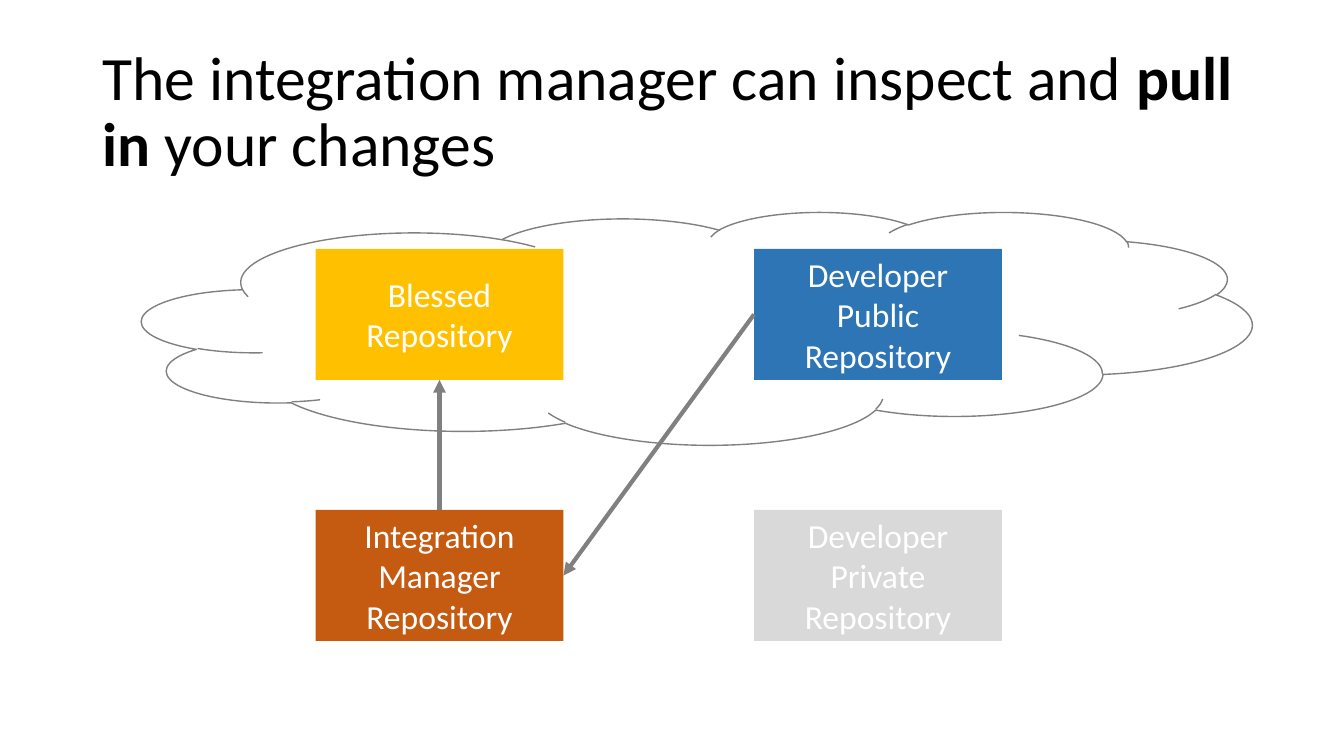
from lxml.etree import SubElement
from pptx import Presentation
from pptx.dml.color import RGBColor
from pptx.enum.shapes import MSO_CONNECTOR, MSO_SHAPE
from pptx.enum.text import MSO_ANCHOR, PP_ALIGN
from pptx.oxml.ns import qn
from pptx.util import Pt

COLORS = {
    "text": "000000",
    "label": "FFFFFF",
    "line": "808080",
    "blessed": "FFC000",
    "public": "2E75B6",
    "manager": "C55A11",
    "private": "D9D9D9",
}
TOP, LEFT, BOTTOM, RIGHT = range(4)
COLUMNS = (225.4, 538.6)
ROWS = (177.8, 364.3)
BOX_SIZE = (177.1, 93.6)
REPOSITORIES = {
    "blessed": ("Blessed Repository", 0, 0),
    "public": ("Developer Public Repository", 1, 0),
    "manager": ("Integration Manager Repository", 0, 1),
    "private": ("Developer Private Repository", 1, 1),
}


def color(name):
    return RGBColor.from_string(COLORS[name])


class Slide:
    font = "Calibri"
    title_size = 44
    label_size = 24

    def __init__(self, deck):
        self.page = deck.slides.add_slide(deck.slide_layouts[6])

    def add_text(self, box, spans, size, ink, alignment, spacing):
        frame = box.text_frame
        for name, value in {"word_wrap": True, "vertical_anchor": MSO_ANCHOR.MIDDLE}.items():
            setattr(frame, name, value)
        para = frame.paragraphs[0]
        for name, value in {"alignment": alignment, "line_spacing": spacing}.items():
            setattr(para, name, value)
        for text, bold in spans:
            span = para.add_run()
            span.text = text
            style = {"name": self.font, "size": Pt(size), "bold": bold}
            for name, value in style.items():
                setattr(span.font, name, value)
            span.font.color.rgb = color(ink)

    def title(self, spans, *bounds):
        box = self.page.shapes.add_textbox(*map(Pt, bounds))
        self.add_text(box, spans, self.title_size, "text", PP_ALIGN.LEFT, 0.9)

    def cloud(self, *bounds):
        cloud = self.page.shapes.add_shape(MSO_SHAPE.CLOUD, *map(Pt, bounds))
        cloud.shadow.inherit = False
        cloud.fill.background()
        cloud.line.color.rgb = color("line")
        cloud.line.width = Pt(1)

    def repository(self, fill, label, column, row):
        bounds = (COLUMNS[column], ROWS[row], *BOX_SIZE)
        box = self.page.shapes.add_shape(MSO_SHAPE.RECTANGLE, *map(Pt, bounds))
        box.shadow.inherit = False
        box.fill.solid()
        box.fill.fore_color.rgb = color(fill)
        box.line.fill.background()
        self.add_text(box, [(label, False)], self.label_size, "label", PP_ALIGN.CENTER, 1.0)
        return box

    def arrow(self, target, target_side, source, source_side):
        arrow = self.page.shapes.add_connector(MSO_CONNECTOR.STRAIGHT, 0, 0, 0, 0)
        arrow.begin_connect(target, target_side)
        arrow.end_connect(source, source_side)
        arrow.line.color.rgb = color("line")
        arrow.line.width = Pt(3)
        outline = arrow._element.spPr.find(qn("a:ln"))
        SubElement(outline, qn("a:headEnd"), type="triangle")
        SubElement(arrow._element.spPr, qn("a:effectLst"))


def main():
    deck = Presentation()
    deck.slide_width, deck.slide_height = Pt(960), Pt(540)
    slide = Slide(deck)
    slide.title(
        [
            ("The integration manager can inspect and ", False),
            ("pull in", True),
            (" your changes", False),
        ],
        66, 28.75, 828, 104.4,
    )
    slide.cloud(101.5, 151.2, 792.7, 166.3)
    boxes = {
        name: slide.repository(name, *details)
        for name, details in REPOSITORIES.items()
    }
    slide.arrow(boxes["manager"], RIGHT, boxes["public"], LEFT)
    slide.arrow(boxes["blessed"], BOTTOM, boxes["manager"], TOP)
    deck.save("out.pptx")


if __name__ == "__main__":
    main()
